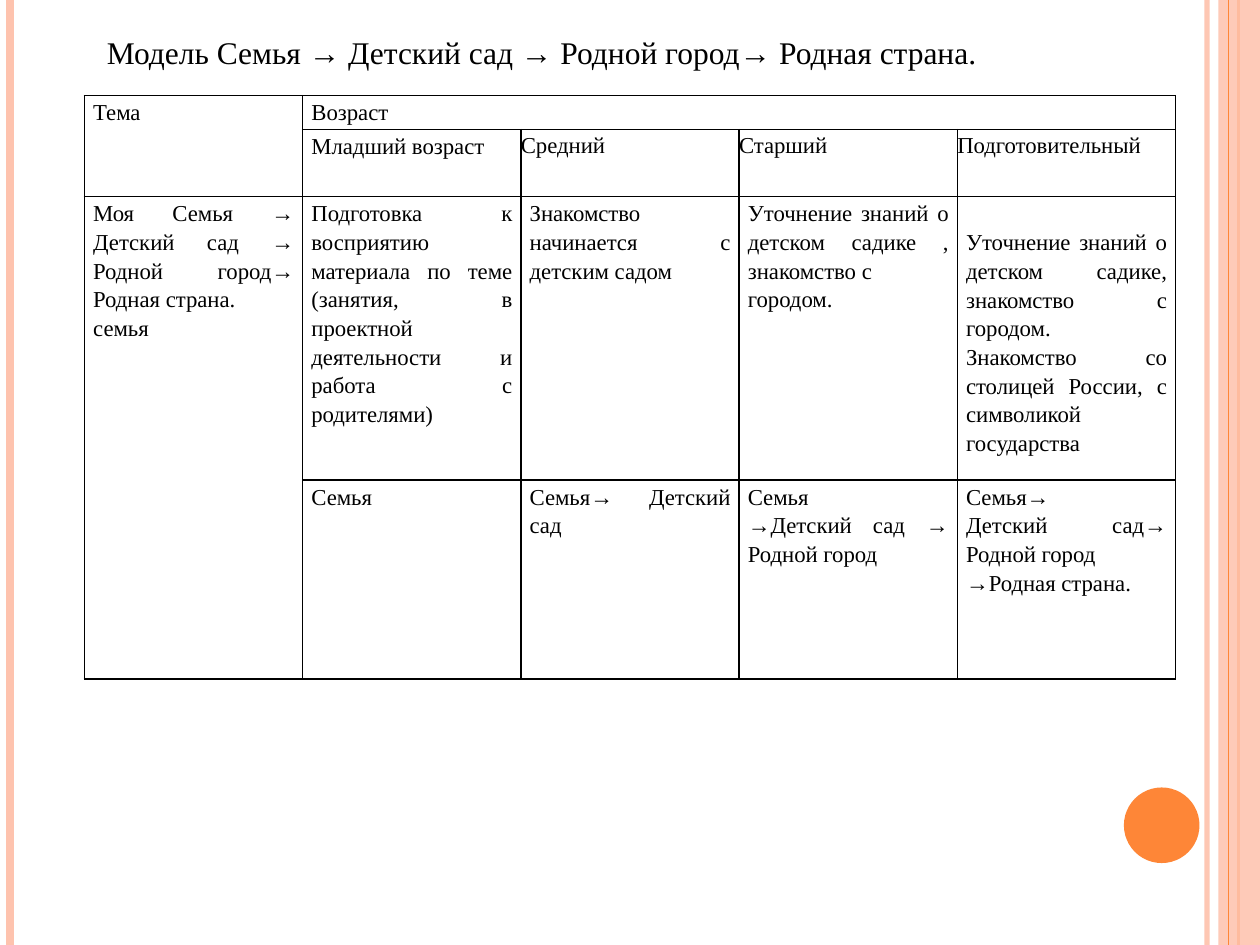
from pptx import Presentation
from pptx import util as u
from pptx.dml.color import RGBColor
from pptx.enum import shapes, text
from pptx.oxml.ns import qn
from lxml import etree

BLACK = RGBColor(0x00, 0x00, 0x00)
PEACH = RGBColor(0xFE, 0xC3, 0xAE)
ORANGE = RGBColor(0xFE, 0x86, 0x37)
FONT = "Times New Roman"

TITLE = "Модель Семья → Детский сад → Родной город→ Родная страна."
HEIGHTS = [0.27, 0.53, 2.25, 1.58]
# None marks a cell covered by a merged neighbour
ROWS = [
    ["Тема", "Возраст", None, None, None],
    [None, "Младший возраст", "Средний", "Старший", "Подготовительный"],
    ["Моя Семья → Детский сад → Родной город→ Родная страна.\nсемья",
     "Подготовка к восприятию материала по теме (занятия, в проектной "
     "деятельности и работа с родителями)",
     "Знакомство начинается с детским садом",
     "Уточнение знаний о детском садике , знакомство с\nгородом.",
     "Уточнение знаний о детском садике, знакомство с городом.\n"
     "Знакомство со столицей России, с символикой государства"],
    [None, "Семья", "Семья→ Детский сад",
     "Семья\n→Детский сад → Родной город",
     "Семья→\nДетский сад→ Родной город\n→Родная страна."],
]
MERGES = [((0, 0), (1, 0)), ((0, 1), (0, 4)), ((2, 0), (3, 0))]


def fade(fill, part):
    """Set the opacity, in percent, of a solid fill."""
    tint = part.find(".//" + qn("a:srgbClr"))
    etree.SubElement(tint, qn("a:alpha"), val=str(fill * 1000))


def add_stripe(slide, x, color, width, alpha=None):
    line = slide.shapes.add_connector(
        shapes.MSO_CONNECTOR.STRAIGHT,
        u.Inches(x), 0, u.Inches(x), u.Inches(7.5))
    line.line.color.rgb = color
    line.line.width = u.Pt(width)
    props = line.line._get_or_add_ln().getparent()
    etree.SubElement(props, qn("a:effectLst"))
    if alpha:
        fade(alpha, props)


def add_solid(slide, kind, box, color, alpha=None):
    shape = slide.shapes.add_shape(kind, *map(u.Inches, box))
    shape.shadow.inherit = False
    shape.fill.solid()
    shape.fill.fore_color.rgb = color
    shape.line.fill.background()
    if alpha:
        fade(alpha, shape.element.spPr)


def style(frame, size, gap=None):
    frame.word_wrap = True
    for para in frame.paragraphs:
        para.alignment = text.PP_ALIGN.JUSTIFY
        if gap:
            para.line_spacing = gap
        for run in para.runs:
            run.font.name = FONT
            run.font.size = u.Pt(size)
            run.font.color.rgb = BLACK


def add_title(slide):
    box = slide.shapes.add_textbox(*map(u.Inches, (0.75, 0.21, 8.19, 0.4)))
    box.text_frame.text = TITLE
    style(box.text_frame, 18)


def set_border(cell):
    props = cell._tc.get_or_add_tcPr()
    for spot, side in enumerate(("lnL", "lnR", "lnT", "lnB")):
        line = etree.Element(qn("a:" + side), w=str(u.Pt(1)))
        fill = etree.SubElement(line, qn("a:solidFill"))
        etree.SubElement(fill, qn("a:srgbClr"), val=str(BLACK))
        props.insert(spot, line)


def set_pads(cell, side, top):
    cell.margin_left = cell.margin_right = u.Inches(side)
    cell.margin_top = u.Inches(top)
    cell.margin_bottom = 0


def add_grid(slide):
    frame = slide.shapes.add_table(
        len(ROWS), 5, *map(u.Inches, (0.67, 0.76, 8.66, sum(HEIGHTS))))
    table = frame.table
    table.first_row = table.horz_banding = False
    for col in table.columns:
        col.width = u.Inches(8.66 / 5)
    for r, words in enumerate(ROWS):
        table.rows[r].height = u.Inches(HEIGHTS[r])
        for c, word in enumerate(words):
            cell = table.cell(r, c)
            cell.fill.background()
            set_border(cell)
            set_pads(cell, 0.07, 0.01)
            if word:
                cell.text_frame.text = word
                style(cell.text_frame, 13, 1.15)
    for start, end in MERGES:
        table.cell(*start).merge(table.cell(*end))
    # Age headings sit flush with their cells
    for c in range(2, 5):
        set_pads(table.cell(1, c), 0, 0)
    # The last topic starts one line lower
    set_pads(table.cell(2, 4), 0.07, 0.24)


def main():
    deck = Presentation()
    deck.slide_width, deck.slide_height = u.Inches(10), u.Inches(7.5)
    slide = deck.slides.add_slide(deck.slide_layouts[6])

    # Side stripes and dot
    add_stripe(slide, 9.58, PEACH, 3, 93)
    add_stripe(slide, 0.08, PEACH, 4.5)
    add_stripe(slide, 9.83, ORANGE, 1.5)
    add_solid(slide, shapes.MSO_SHAPE.RECTANGLE, (9.67, 0, 0.33, 7.5), PEACH, 87)
    add_stripe(slide, 9.75, ORANGE, 0.75)
    add_solid(slide, shapes.MSO_SHAPE.OVAL, (8.92, 6.25, 0.6, 0.6), ORANGE)

    # Title and table
    add_title(slide)
    add_grid(slide)
    deck.save("out.pptx")


if __name__ == "__main__":
    main()
